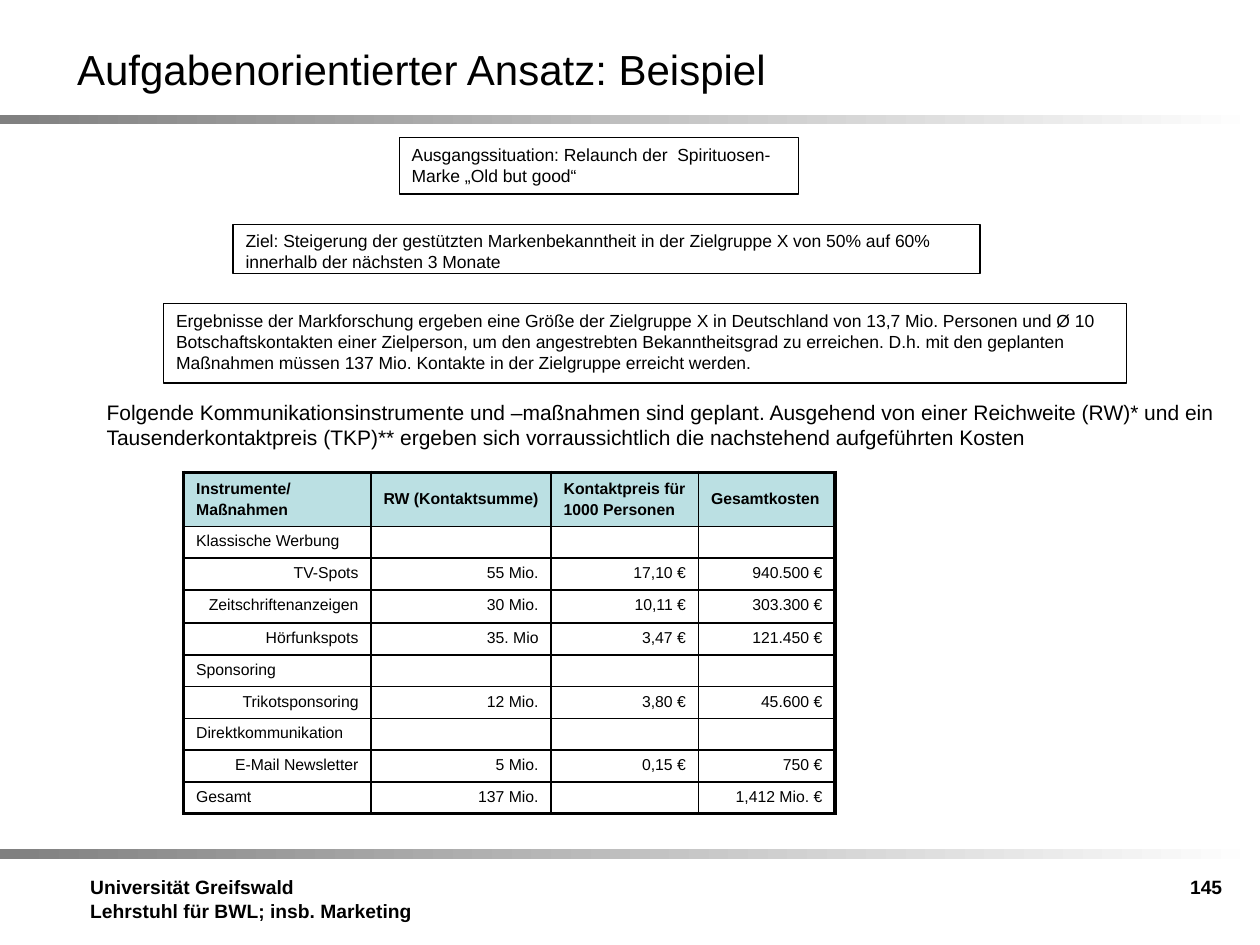
import lxml.etree
import pptx
import pptx.dml.color
import pptx.enum.shapes
import pptx.enum.text
import pptx.oxml.ns
import pptx.util

Cm = pptx.util.Cm
Pt = pptx.util.Pt
Align = pptx.enum.text.PP_ALIGN
Anchor = pptx.enum.text.MSO_ANCHOR
qn = pptx.oxml.ns.qn

INSTRUMENT_ROWS = [
    ("Instrumente/\nMaßnahmen", "RW (Kontaktsumme)", "Kontaktpreis für\n1000 Personen", "Gesamtkosten"),
    ("Klassische Werbung", "", "", ""),
    ("TV-Spots", "55 Mio.", "17,10 €", "940.500 €"),
    ("Zeitschriftenanzeigen", "30 Mio.", "10,11 €", "303.300 €"),
    ("Hörfunkspots", "35. Mio", "3,47 €", "121.450 €"),
    ("Sponsoring", "", "", ""),
    ("Trikotsponsoring", "12 Mio.", "3,80 €", "45.600 €"),
    ("Direktkommunikation", "", "", ""),
    ("E-Mail Newsletter", "5 Mio.", "0,15 €", "750 €"),
    ("Gesamt", "137 Mio.", "", "1,412 Mio. €"),
]
GROUPS = {"Klassische Werbung", "Sponsoring", "Direktkommunikation", "Gesamt"}
COLUMN_WIDTHS = [3.78, 3.63, 2.97, 2.75]
ROW_HEIGHTS = [1.09, 0.64, 0.64, 0.67] + [0.64] * 6

STEPS = [
    ((8.05, 2.77, 8.05, 1.14), "Ausgangssituation: Relaunch der  Spirituosen-Marke „Old but good“"),
    ((4.7, 4.52, 15.06, 0.99),
     "Ziel: Steigerung der gestützten Markenbekanntheit in der Zielgruppe X "
     "von 50% auf 60% innerhalb der nächsten 3 Monate"),
    ((3.3, 6.12, 19.41, 1.6),
     "Ergebnisse der Markforschung ergeben eine Größe der Zielgruppe X in Deutschland "
     "von 13,7 Mio. Personen und Ø 10 Botschaftskontakten einer Zielperson, um den "
     "angestrebten Bekanntheitsgrad zu erreichen. D.h. mit den geplanten Maßnahmen "
     "müssen 137 Mio. Kontakte in der Zielgruppe erreicht werden."),
]
COST_INTRODUCTION = (
    "Folgende Kommunikationsinstrumente und –maßnahmen sind geplant. Ausgehend von einer "
    "Reichweite (RW)* und ein Tausenderkontaktpreis (TKP)** ergeben sich vorraussichtlich "
    "die nachstehend aufgeführten Kosten"
)


def color(value):
    return pptx.dml.color.RGBColor.from_string(value)


def write(frame, text, font="Arial", ink="000000", size=10, bold=False,
          align=Align.LEFT, anchor=Anchor.TOP, gap=0):
    frame.word_wrap = True
    frame.vertical_anchor = anchor
    for index, line in enumerate(text.split("\n")):
        paragraph = frame.add_paragraph() if index else frame.paragraphs[0]
        paragraph.alignment = align
        paragraph.space_before = Pt(gap if index else 0)
        if not line:
            lxml.etree.SubElement(paragraph._p, qn("a:endParaRPr"), sz=str(size * 100))
            continue
        run = paragraph.add_run()
        run.text = line
        run.font.name = font
        run.font.size = Pt(size)
        run.font.bold = bold
        run.font.color.rgb = color(ink)


class LectureSlide:
    """Holds the lecture style and the slide that is being filled."""

    ink = "000000"
    header_fill = "BBE0E3"
    bar_start, bar_end = "808080", "FFFFFF"
    thin, thick = 1, 2.25

    def __init__(self, presentation):
        self.slide = presentation.slides.add_slide(presentation.slide_layouts[5])

    def title(self, box, text):
        shape = self.slide.shapes.title
        shape.left, shape.top, shape.width, shape.height = map(Cm, box)
        shape.text_frame.auto_size = pptx.enum.text.MSO_AUTO_SIZE.NONE
        write(shape.text_frame, text, size=24, anchor=Anchor.MIDDLE)

    def rectangle(self, box):
        shape = self.slide.shapes.add_shape(
            pptx.enum.shapes.MSO_SHAPE.RECTANGLE, *map(Cm, box))
        shape.shadow.inherit = False
        return shape

    def bar(self, top):
        shape = self.rectangle((0, top, 25.4, 0.2))
        shape.line.fill.background()
        shape.fill.gradient()
        shape.fill.gradient_angle = 0
        for stop, value in zip(shape.fill.gradient_stops, (self.bar_start, self.bar_end)):
            stop.color.rgb = color(value)

    def framed_text(self, box, text):
        shape = self.rectangle(box)
        shape.fill.background()
        shape.line.color.rgb = color(self.ink)
        shape.line.width = Pt(0.75)
        write(shape.text_frame, text)

    def text(self, box, text, **text_format):
        shape = self.slide.shapes.add_textbox(*map(Cm, box))
        write(shape.text_frame, text, **text_format)

    def border(self, cell, side, points):
        properties = cell._tc.get_or_add_tcPr()
        line = lxml.etree.SubElement(properties, qn("a:ln" + side), w=str(Pt(points)))
        fill = lxml.etree.SubElement(line, qn("a:solidFill"))
        lxml.etree.SubElement(fill, qn("a:srgbClr"), val=self.ink)

    def table(self, left, top, rows, widths, heights):
        table = self.slide.shapes.add_table(
            len(rows), len(widths), Cm(left), Cm(top),
            Cm(sum(widths)), Cm(sum(heights))).table
        table.first_row = table.horz_banding = False
        for column, width in zip(table.columns, widths):
            column.width = Cm(width)
        for row, height in zip(table.rows, heights):
            row.height = Cm(height)
        for row_index, values in enumerate(rows):
            for column_index, value in enumerate(values):
                cell = table.cell(row_index, column_index)
                outer = {"L": column_index == 0, "R": column_index == len(widths) - 1,
                         "T": row_index == 0, "B": row_index == len(rows) - 1}
                for side, is_outer in outer.items():
                    self.border(cell, side, self.thick if is_outer else self.thin)
                header = row_index == 0
                if header:
                    cell.fill.solid()
                    cell.fill.fore_color.rgb = color(self.header_fill)
                    cell.vertical_anchor = Anchor.MIDDLE
                else:
                    cell.fill.background()
                left_aligned = header or value in GROUPS
                write(cell.text_frame, value, size=9, bold=header, gap=2,
                      align=Align.LEFT if left_aligned else Align.RIGHT,
                      anchor=Anchor.MIDDLE if header else Anchor.TOP)


def main():
    presentation = pptx.Presentation()
    presentation.slide_width, presentation.slide_height = Cm(25.4), Cm(19.05)
    lecture = LectureSlide(presentation)
    for top in (2.31, 17.12):
        lecture.bar(top)
    lecture.text((1.57, 17.53, 7.39, 1.5),
                 "Universität Greifswald\nLehrstuhl für BWL; insb. Marketing", size=11, bold=True)
    lecture.title((1.3, 0.58, 22.86, 1.6), "Aufgabenorientierter Ansatz: Beispiel")
    for box, text in STEPS:
        lecture.framed_text(box, text)
    lecture.text((1.9, 7.92, 23.5, 1.02), COST_INTRODUCTION, size=12)
    lecture.table(3.7, 9.52, INSTRUMENT_ROWS, COLUMN_WIDTHS, ROW_HEIGHTS)
    lecture.text((18.97, 17.53, 5.92, 1.45), "145", size=11, bold=True, align=Align.RIGHT)
    presentation.save("out.pptx")


if __name__ == "__main__":
    main()
